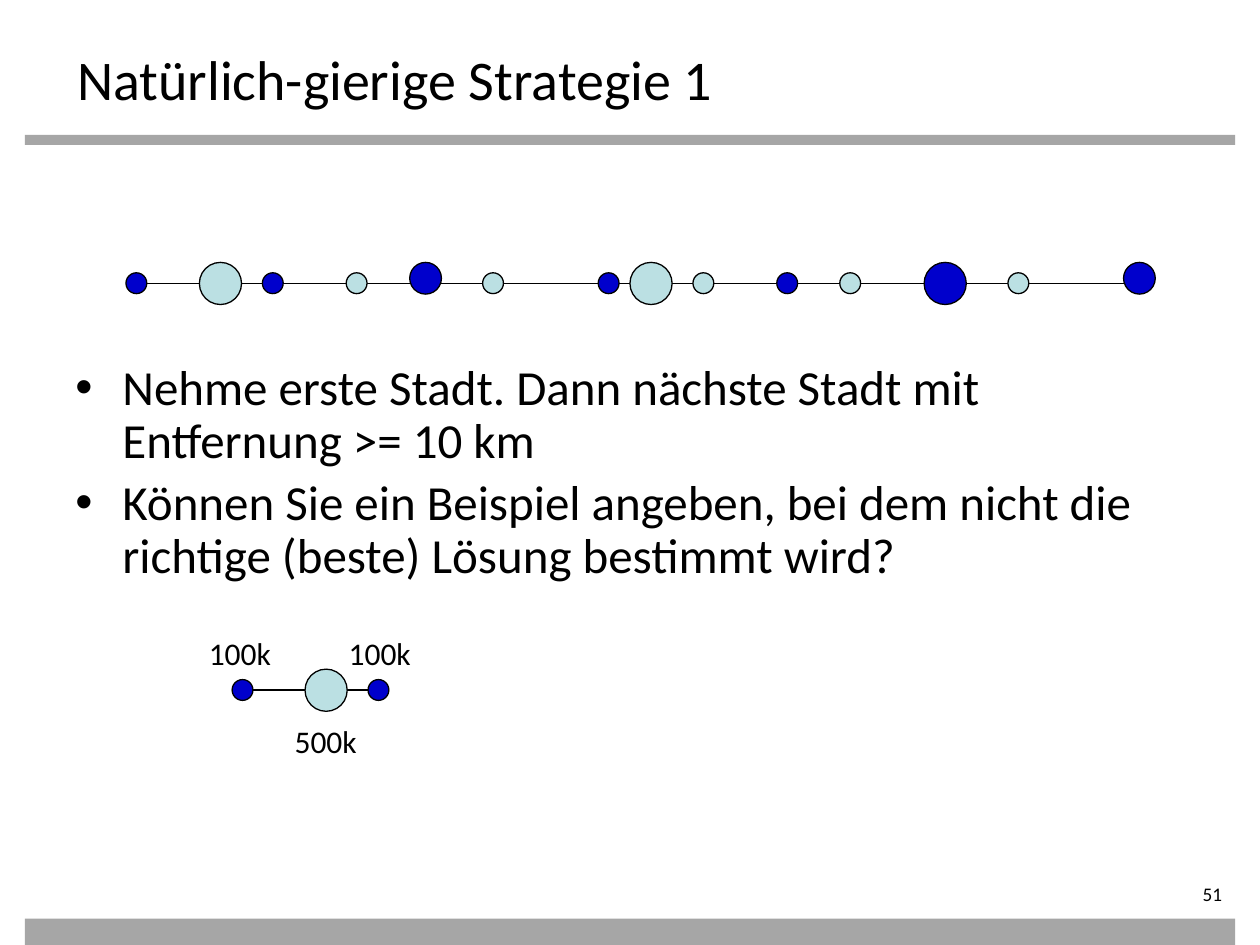
from lxml.etree import SubElement
from pptx import Presentation
from pptx.dml.color import RGBColor
from pptx.enum.shapes import MSO_CONNECTOR, MSO_SHAPE
from pptx.enum.text import MSO_ANCHOR, MSO_AUTO_SIZE, PP_ALIGN
from pptx.oxml.ns import qn
from pptx.util import Cm, Pt

BLACK = RGBColor(0x00, 0x00, 0x00)
GREY = RGBColor(0xA6, 0xA6, 0xA6)
CHOSEN = RGBColor(0x00, 0x00, 0xCC)
SKIPPED = RGBColor(0xBB, 0xE0, 0xE3)
FONT = "Calibri"

SMALL, MEDIUM, LARGE = 0.42, 0.64, 0.85
RISE = {SMALL: 0.21, MEDIUM: 0.42, LARGE: 0.42}

ROAD_CITIES = [
    (4.02, LARGE, SKIPPED), (6.98, SMALL, SKIPPED), (9.73, SMALL, SKIPPED),
    (12.7, LARGE, SKIPPED), (13.97, SMALL, SKIPPED), (16.93, SMALL, SKIPPED),
    (20.32, SMALL, SKIPPED), (2.54, SMALL, CHOSEN), (5.29, SMALL, CHOSEN),
    (8.26, MEDIUM, CHOSEN), (12.06, SMALL, CHOSEN), (15.66, SMALL, CHOSEN),
    (18.63, LARGE, CHOSEN), (22.65, MEDIUM, CHOSEN),
]
EXAMPLE_CITIES = [
    (6.15, LARGE, SKIPPED), (4.68, SMALL, CHOSEN), (7.42, SMALL, CHOSEN),
]
POPULATIONS = [("100k", 3.96, 12.65), ("100k", 6.78, 12.65), ("500k", 5.69, 14.43)]
POINTS = [
    "Nehme erste Stadt. Dann nächste Stadt mit Entfernung >= 10 km",
    "Können Sie ein Beispiel angeben, bei dem nicht die richtige (beste) "
    "Lösung bestimmt wird?",
]


def add_run(paragraph, text, size):
    """Append a black run in the slide font."""
    run = paragraph.add_run()
    run.text = text
    run.font.name = FONT
    run.font.size = Pt(size)
    run.font.color.rgb = BLACK


def add_bar(slide, top, height):
    """Draw a grey bar across the slide."""
    bar = slide.shapes.add_shape(
        MSO_SHAPE.RECTANGLE, Cm(0.5), Cm(top), Cm(24.4), Cm(height))
    bar.shadow.inherit = False
    bar.fill.solid()
    bar.fill.fore_color.rgb = GREY
    bar.line.fill.background()


def add_road(slide, start, end, axis, cities):
    """Draw a road with its cities given as left edge, diameter and colour."""
    road = slide.shapes.add_connector(
        MSO_CONNECTOR.STRAIGHT, Cm(start), Cm(axis), Cm(end), Cm(axis))
    road.line.color.rgb = BLACK
    road.line.width = Pt(0.75)
    SubElement(road.element.spPr, qn("a:effectLst"))
    for left, diameter, colour in cities:
        city = slide.shapes.add_shape(
            MSO_SHAPE.OVAL, Cm(left), Cm(axis - RISE[diameter]),
            Cm(diameter), Cm(diameter))
        city.shadow.inherit = False
        city.fill.solid()
        city.fill.fore_color.rgb = colour
        city.line.color.rgb = BLACK
        city.line.width = Pt(0.75)


def set_title(slide, text):
    """Place and fill the title placeholder."""
    title = slide.shapes.title
    title.left, title.top, title.width, title.height = (
        Cm(1.3), Cm(0.71), Cm(22.86), Cm(1.4))
    frame = title.text_frame
    frame.auto_size = MSO_AUTO_SIZE.NONE
    frame.vertical_anchor = MSO_ANCHOR.TOP
    frame.margin_top = Cm(0.18)
    frame.paragraphs[0].alignment = PP_ALIGN.LEFT
    add_run(frame.paragraphs[0], text, 32)


def add_points(slide, points):
    """Add the bulleted text."""
    frame = slide.shapes.add_textbox(
        Cm(1.27), Cm(7.19), Cm(22.86), Cm(4.01)).text_frame
    frame.word_wrap = True
    for index, text in enumerate(points):
        point = frame.add_paragraph() if index else frame.paragraphs[0]
        properties = point._p.get_or_add_pPr()
        properties.set("marL", str(Cm(0.95)))
        properties.set("indent", str(-Cm(0.95)))
        SubElement(properties, qn("a:buFont"), typeface="Arial")
        SubElement(properties, qn("a:buChar"), char="•")
        point.line_spacing = 0.9
        point.space_before = Pt(5.6 if index else 0)
        add_run(point, text, 28)


def add_population(slide, text, left, top):
    """Add a population label."""
    frame = slide.shapes.add_textbox(
        Cm(left), Cm(top), Cm(1.88), Cm(1.02)).text_frame
    frame.word_wrap = False
    frame.auto_size = MSO_AUTO_SIZE.SHAPE_TO_FIT_TEXT
    add_run(frame.paragraphs[0], text, 18)


def add_page_number(slide, text):
    """Add the page number at the lower right."""
    frame = slide.shapes.add_textbox(
        Cm(22.1), Cm(17.78), Cm(2.79), Cm(0.56)).text_frame
    frame.word_wrap = True
    frame.margin_left = frame.margin_top = frame.margin_bottom = 0
    frame.paragraphs[0].alignment = PP_ALIGN.RIGHT
    add_run(frame.paragraphs[0], text, 11)


def main():
    """Build and save the slide."""
    presentation = Presentation()
    presentation.slide_width = Cm(25.4)
    presentation.slide_height = Cm(19.05)
    slide = presentation.slides.add_slide(presentation.slide_layouts[5])
    add_bar(slide, 2.72, 0.2)
    add_bar(slide, 18.52, 0.53)
    set_title(slide, "Natürlich-gierige Strategie 1")
    add_points(slide, POINTS)
    add_road(slide, 2.54, 23.06, 5.71, ROAD_CITIES)
    add_road(slide, 4.88, 7.65, 13.91, EXAMPLE_CITIES)
    for text, left, top in POPULATIONS:
        add_population(slide, text, left, top)
    add_page_number(slide, "51")
    presentation.save("out.pptx")


if __name__ == "__main__":
    main()
